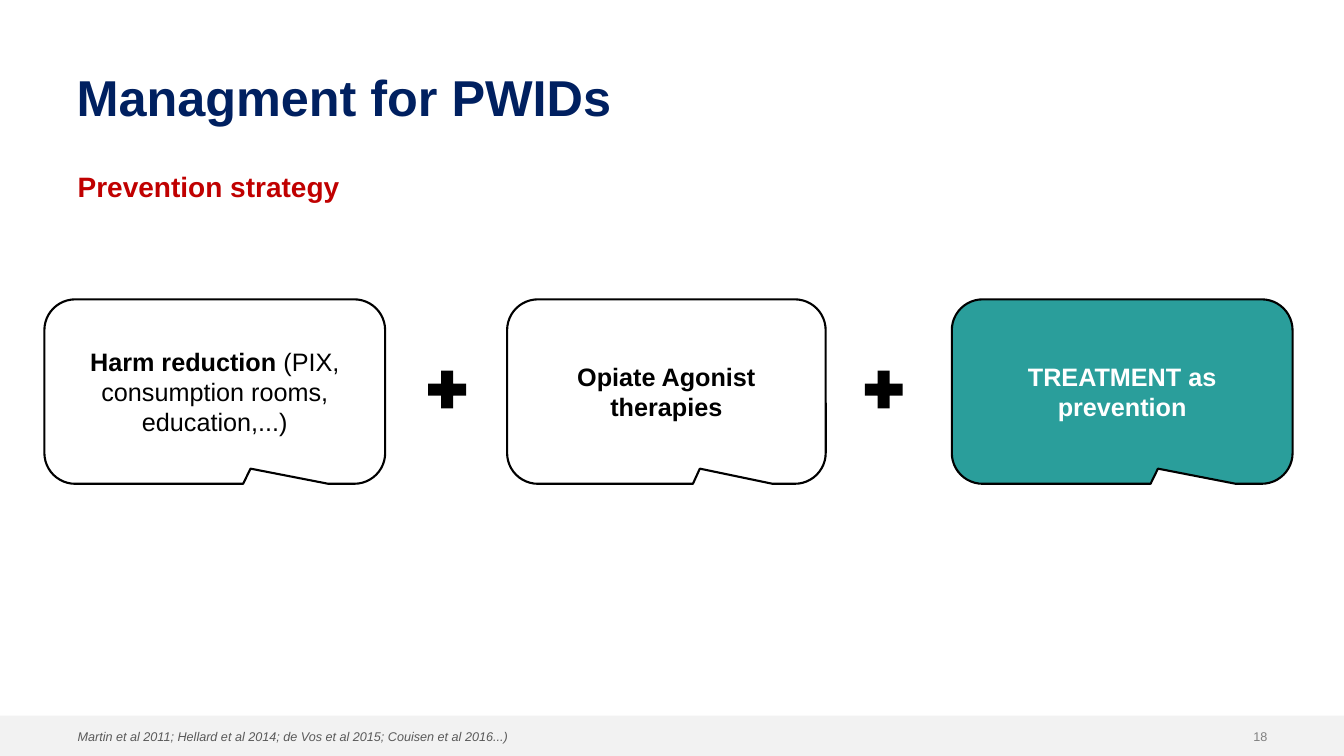
import pptx
import pptx.dml.color
import pptx.enum.shapes
import pptx.enum.text
import pptx.util

PX = 9144  # EMU per px, 100 px to the inch
THEME = {
    "font": "Arial",
    "white": "FFFFFF", "black": "000000", "teal": "2A9E9B",
    "navy": "002060", "red": "C00000", "band": "F2F2F2",
    "source": "595959", "number": "808080",
    "title_size": 36, "subtitle_size": 20, "box_size": 18, "footer_size": 9,
}
SHAPES = pptx.enum.shapes.MSO_SHAPE
ALIGN = pptx.enum.text.PP_ALIGN
ANCHOR = pptx.enum.text.MSO_ANCHOR

deck = pptx.Presentation()
deck.slide_width, deck.slide_height = 1333 * PX, 750 * PX
page = deck.slides.add_slide(deck.slide_layouts[6])


def add_filled(kind, left, top, width, height, color):
    shape = page.shapes.add_shape(kind, left * PX, top * PX, width * PX, height * PX)
    shape.shadow.inherit = False
    shape.fill.solid()
    shape.fill.fore_color.rgb = pptx.dml.color.RGBColor.from_string(THEME[color])
    shape.line.fill.background()
    return shape


def write(box, runs, size, color, align, inset=(0, 0), anchor=ANCHOR.TOP, spacing=0.9):
    frame = box.text_frame
    frame.word_wrap = True
    frame.vertical_anchor = anchor
    frame.margin_left = frame.margin_right = inset[0] * PX
    frame.margin_top = frame.margin_bottom = inset[1] * PX
    para = frame.paragraphs[0]
    para.alignment = align
    para.line_spacing = spacing
    for text, bold, italic in runs:
        span = para.add_run()
        span.text = text
        span.font.name = THEME["font"]
        span.font.size = pptx.util.Pt(THEME[size])
        span.font.color.rgb = pptx.dml.color.RGBColor.from_string(THEME[color])
        span.font.bold, span.font.italic = bold, italic


# Footer band
add_filled(SHAPES.RECTANGLE, 0, 710, 1333, 40, "band")

# Title, subtitle, sources and page number
SOURCES = "Martin et al 2011; Hellard et al 2014; de Vos et al 2015; Couisen et al 2016...)"
texts = [
    (76, 72, 1177, 47, "Managment for PWIDs", True, False, "title_size", "navy", ALIGN.LEFT),
    (77, 172, 1180, 38, "Prevention strategy", True, False, "subtitle_size", "red", ALIGN.LEFT),
    (77, 725, 529, 13, SOURCES, False, True, "footer_size", "source", ALIGN.LEFT),
    (1067, 725, 190, 13, "18", False, False, "footer_size", "number", ALIGN.RIGHT),
]
for left, top, width, height, text, bold, italic, size, color, align in texts:
    box = page.shapes.add_textbox(left * PX, top * PX, width * PX, height * PX)
    write(box, [(text, bold, italic)], size, color, align)

# Strategy callouts
callouts = [
    (44, 338, "white", "black", [
        ("Harm reduction ", True, False),
        ("(PIX, consumption rooms, education,...)", False, False),
    ]),
    (503, 316, "white", "black", [("Opiate Agonist therapies", True, False)]),
    (944, 338, "teal", "white", [("TREATMENT as prevention", True, False)]),
]
for left, width, fill, color, runs in callouts:
    callout = add_filled(SHAPES.ROUNDED_RECTANGULAR_CALLOUT, left, 297, width, 183, fill)
    for index, value in enumerate((0.105, 0.418, 0.167)):
        callout.adjustments[index] = value
    callout.line.color.rgb = pptx.dml.color.RGBColor.from_string(THEME["black"])
    callout.line.width = pptx.util.Pt(1.5)
    write(callout, runs, "box_size", color, ALIGN.CENTER, (4, 5), ANCHOR.MIDDLE, 1.0)

# Plus signs between the callouts
for left in (418, 851):
    add_filled(SHAPES.MATH_PLUS, left, 361, 51, 51, "black")

deck.save("out.pptx")
